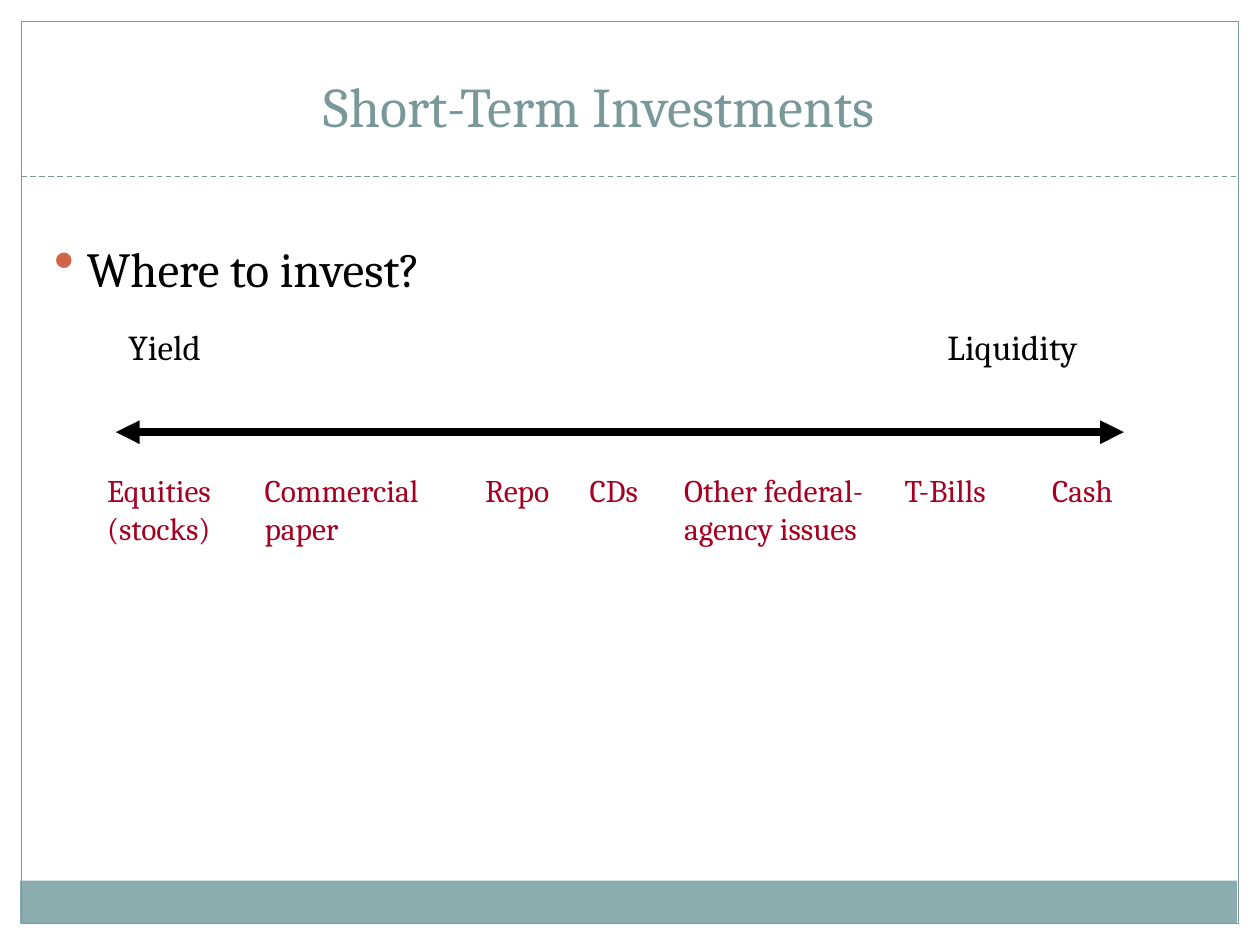
from dataclasses import dataclass

from lxml.etree import SubElement
from pptx import Presentation
from pptx.dml.color import RGBColor
from pptx.enum.dml import MSO_LINE
from pptx.enum.shapes import MSO_CONNECTOR, MSO_SHAPE
from pptx.oxml.ns import qn
from pptx.util import Inches, Pt


@dataclass(frozen=True)
class Theme:
    """Colours, font and type sizes of the slide."""
    font: str = "Cambria"
    ink: str = "000000"
    slate: str = "7B9899"
    band: str = "8CADAE"
    bullet: str = "D16349"
    crimson: str = "A50021"
    title_size: float = 32
    question_size: float = 28
    goal_size: float = 20
    option_size: float = 18
    rule_width: float = 0.75
    arrow_width: float = 4.5


THEME = Theme()


def apply_format(target, values):
    """Set each named attribute of target."""
    for name, value in values.items():
        setattr(target, name, value)


def add_text(slide, text, place, size, color, indent=0.01, hanging=0, bullet=None):
    """Add a wrapped, inset-free paragraph, with a bullet if one is given."""
    frame = slide.shapes.add_textbox(*map(Inches, place)).text_frame
    apply_format(frame, {
        "word_wrap": True,
        "margin_left": 0,
        "margin_top": 0,
        "margin_right": 0,
        "margin_bottom": 0,
    })
    paragraph = frame.paragraphs[0]
    paragraph.text = text
    properties = paragraph._p.get_or_add_pPr()
    properties.set("marL", str(Inches(indent)))
    properties.set("indent", str(Inches(hanging)))
    if bullet:
        bullet_color = SubElement(properties, qn("a:buClr"))
        SubElement(bullet_color, qn("a:srgbClr"), val=THEME.bullet)
        SubElement(properties, qn("a:buSzPct"), val="120000")
        SubElement(properties, qn("a:buChar"), char=bullet)
    apply_format(paragraph.font, {"name": THEME.font, "size": Pt(size)})
    paragraph.font.color.rgb = RGBColor.from_string(color)


def add_panel(slide, place, fill=None, outline=None):
    """Add a rectangle with an optional fill and outline."""
    panel = slide.shapes.add_shape(MSO_SHAPE.RECTANGLE, *map(Inches, place))
    panel.shadow.inherit = False
    for paint, color in ((panel.fill, fill), (panel.line.fill, outline)):
        if color:
            paint.solid()
            paint.fore_color.rgb = RGBColor.from_string(color)
        else:
            paint.background()
    if outline:
        panel.line.width = Pt(THEME.rule_width)


def add_rule(slide, left, right, y, color, width, dash=None, arrows=False):
    """Add a horizontal line, dashed or with an arrowhead at each end."""
    rule = slide.shapes.add_connector(
        MSO_CONNECTOR.STRAIGHT, *map(Inches, (left, y, right, y)))
    rule.line.color.rgb = RGBColor.from_string(color)
    apply_format(rule.line, {"width": Pt(width), "dash_style": dash})
    if arrows:
        for end in ("a:headEnd", "a:tailEnd"):
            SubElement(rule.line._get_or_add_ln(), qn(end), type="triangle")
    SubElement(rule._element.spPr, qn("a:effectLst"))


def main():
    """Build the short-term investments slide."""
    deck = Presentation()
    apply_format(deck, {"slide_width": Inches(10), "slide_height": Inches(7.5)})
    slide = deck.slides.add_slide(deck.slide_layouts[6])

    add_panel(slide, (0.16, 6.99, 9.66, 0.34), fill=THEME.band)
    add_panel(slide, (0.17, 0.17, 9.66, 7.16), outline=THEME.slate)
    add_rule(slide, 0.17, 9.83, 1.4, THEME.slate, THEME.rule_width, MSO_LINE.DASH)

    add_text(slide, "Short-Term Investments", (1.94, 0.57, 6.12, 0.45),
             THEME.title_size, THEME.slate, indent=0.63)
    add_text(slide, "Where to invest?", (0.42, 1.89, 4.69, 0.47),
             THEME.question_size, THEME.ink, indent=0.27, hanging=-0.26, bullet="•")

    for goal, left, width in (("Yield", 1.01, 0.66), ("Liquidity", 7.51, 1.15)):
        add_text(slide, goal, (left, 2.58, width, 0.31), THEME.goal_size, THEME.ink)

    add_rule(slide, 0.92, 8.92, 3.43, THEME.ink, THEME.arrow_width, arrows=True)

    options = (
        ("Equities (stocks)", 0.84, 0.94, 0.58),
        ("Commercial paper", 2.09, 1.37, 0.58),
        ("Repo", 3.84, 0.6, 0.28),
        ("CDs", 4.67, 0.48, 0.28),
        ("Other federal- agency issues", 5.42, 1.59, 0.58),
        ("T-Bills", 7.17, 0.76, 0.28),
        ("Cash", 8.34, 0.57, 0.28),
    )
    for option, left, width, height in options:
        add_text(slide, option, (left, 3.74, width, height),
                 THEME.option_size, THEME.crimson)

    deck.save("out.pptx")


if __name__ == "__main__":
    main()
